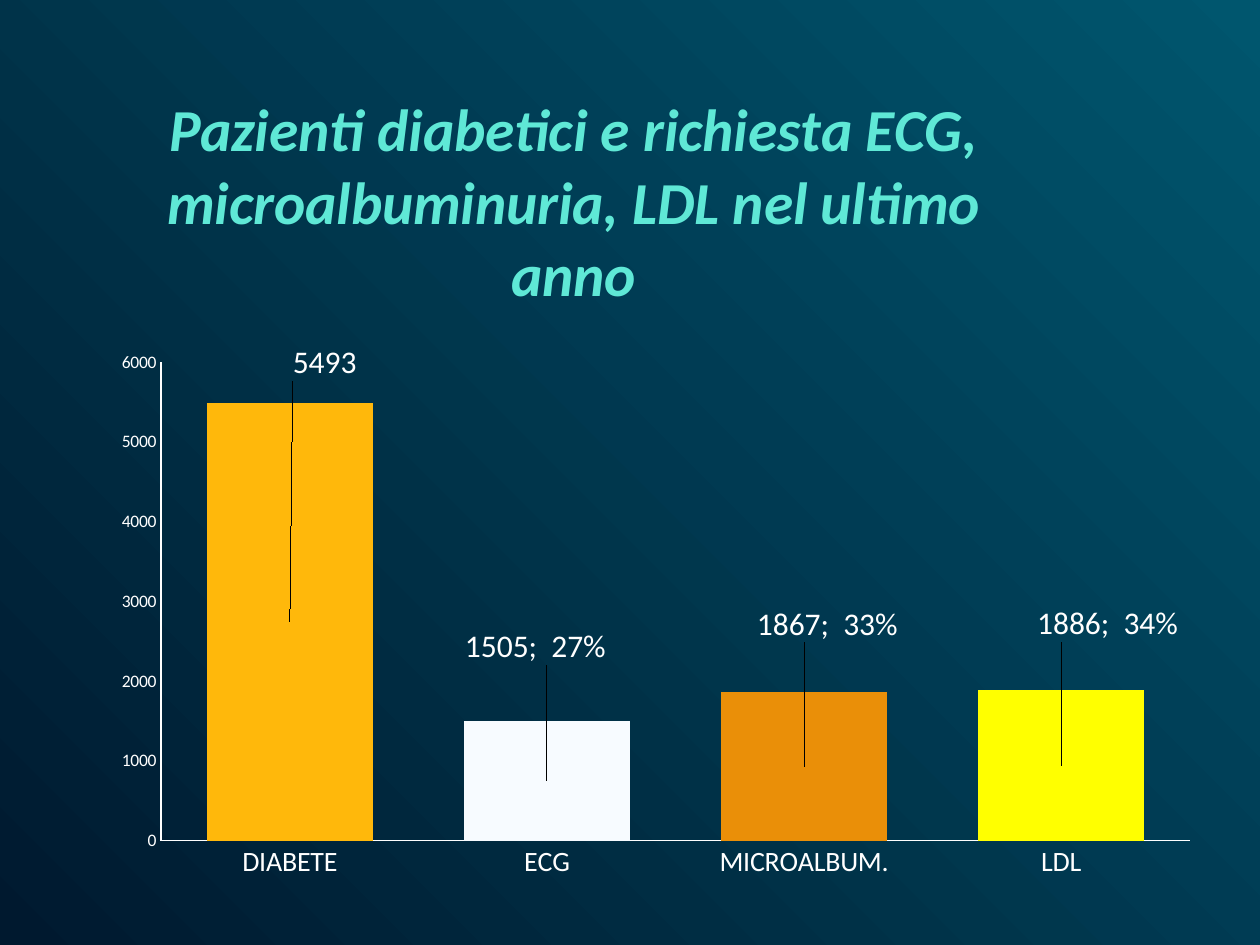
from lxml import etree
from pptx import Presentation
from pptx import util as u
from pptx.chart.data import CategoryChartData
from pptx.dml.color import RGBColor
from pptx.enum import chart as kinds
from pptx.oxml.ns import qn

FONT = "Calibri"


def style(font, size, color="FFFFFF"):
    font.name = FONT
    font.size = u.Pt(size)
    font.color.rgb = RGBColor.from_string(color)


def layout(**settings):
    """Manual chart layout; lengths are shares of the chart's size."""
    element = etree.Element(qn("c:layout"))
    manual = etree.SubElement(element, qn("c:manualLayout"))
    for tag, value in settings.items():
        etree.SubElement(manual, qn("c:" + tag)).set("val", str(value))
    return element


deck = Presentation()
deck.slide_width, deck.slide_height = u.Inches(10), u.Inches(7.5)
page = deck.slides.add_slide(deck.slide_layouts[6])

# Background: dark lower left to teal upper right
fill = page.background.fill
fill.gradient()
fill.gradient_angle = 45
for stop, color in zip(fill.gradient_stops, ("00192F", "00566E")):
    stop.color.rgb = RGBColor.from_string(color)

# Columns: category, value, colour, label, label shift from the column's centre
columns = [
    ("DIABETE", 5493, "FFB80B", "5493", 0.03, -0.31),
    ("ECG", 1505, "F7FBFF", "1505;  27%", -0.01, -0.16),
    ("MICROALBUM.", 1867, "EA8F08", "1867;  33%", 0.02, -0.17),
    ("LDL", 1886, "FFFF00", "1886;  34%", 0.04, -0.17),
]
data = CategoryChartData()
data.categories = [column[0] for column in columns]
data.add_series("Series 1", [column[1] for column in columns])
chart = page.shapes.add_chart(
    kinds.XL_CHART_TYPE.COLUMN_STACKED,
    u.Inches(0.23), u.Inches(0.55), u.Inches(9.22), u.Inches(6.64), data).chart
style(chart.font, 10)
chart.has_legend = False

# Title
chart.has_title = True
title = chart.chart_title
title.include_in_layout = False
para = title.text_frame.paragraphs[0]
para.text = "Pazienti diabetici e richiesta ECG, microalbuminuria, LDL nel ultimo anno"
span = para.runs[0]
style(span.font, 34, "5FE8D6")
span.font.bold = span.font.italic = True
title_xml = title._element
for old in title_xml.findall(qn("c:layout")):
    title_xml.remove(old)
title_xml.find(qn("c:tx")).addnext(
    layout(xMode="edge", yMode="edge", x=0.11, y=0.01))

# Plot area
plot_area = chart._chartSpace.chart.plotArea
for old in plot_area.findall(qn("c:layout")):
    plot_area.remove(old)
plot_area.insert(0, layout(layoutTarget="inner", xMode="edge", yMode="edge",
                           x=0.114, y=0.35, w=0.886, h=0.572))

# Axes
for axis, size in ((chart.category_axis, 16), (chart.value_axis, 10)):
    style(axis.tick_labels.font, size)
    axis.has_major_gridlines = False
    axis.major_tick_mark = axis.minor_tick_mark = kinds.XL_TICK_MARK.NONE
    axis.format.line.color.rgb = RGBColor.from_string("FFFFFF")
    axis.format.line.width = u.Pt(1)
chart.value_axis.minimum_scale = 0
chart.value_axis.maximum_scale = 6000
chart.value_axis.major_unit = 1000

# Column colours and labels
plot = chart.plots[0]
plot.gap_width, plot.overlap = 55, 100
plot.vary_by_categories = False
series = plot.series[0]
series.format.fill.solid()
series.format.fill.fore_color.rgb = RGBColor.from_string("7FD13B")
series.data_labels.show_value = True
style(series.data_labels.font, 18)
for index, (_, _, color, caption, shift_x, shift_y) in enumerate(columns):
    point = series.points[index]
    point.format.fill.solid()
    point.format.fill.fore_color.rgb = RGBColor.from_string(color)
    para = point.data_label.text_frame.paragraphs[0]
    para.text = caption
    style(para.runs[0].font, 18)
    label_xml = series.data_labels._element.findall(qn("c:dLbl"))[index]
    label_xml.find(qn("c:idx")).addnext(layout(x=shift_x, y=shift_y))

deck.save("out.pptx")
